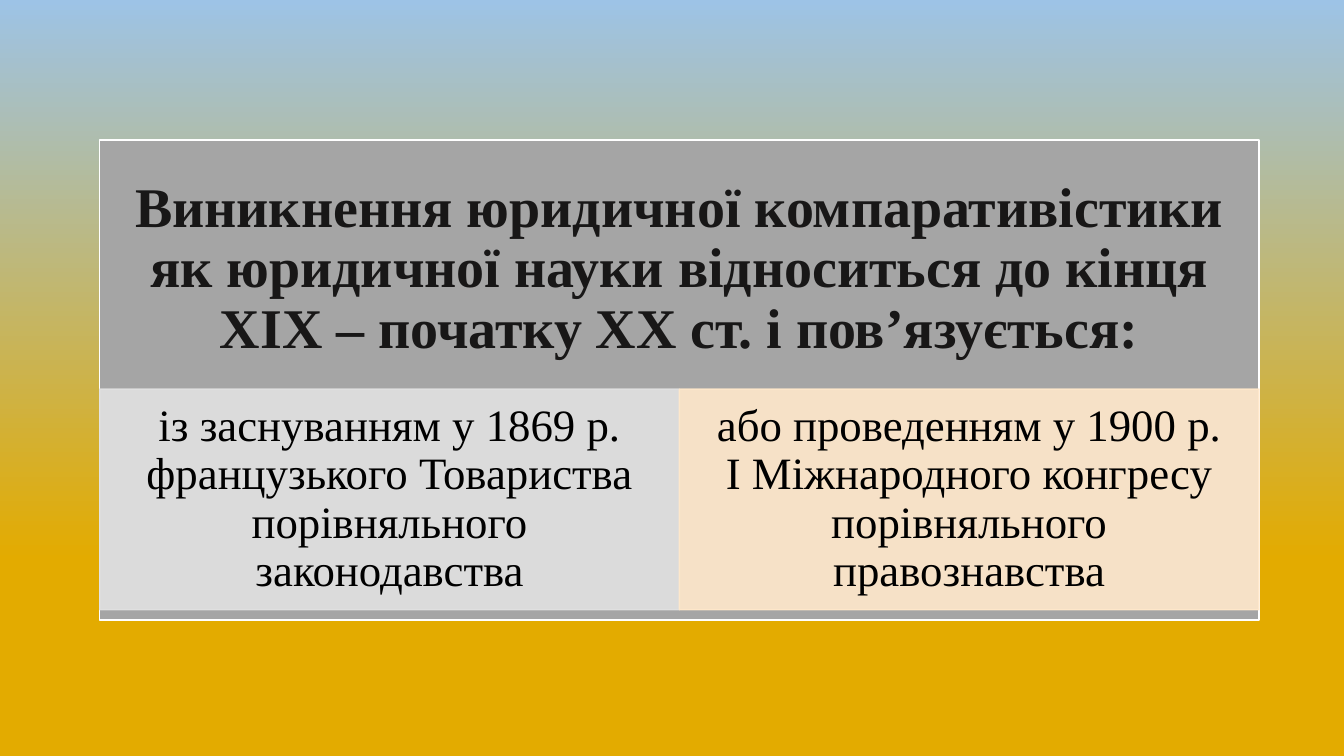
from pptx import Presentation
from pptx.dml.color import RGBColor
from pptx.enum.shapes import MSO_SHAPE as Shape
from pptx.enum.text import MSO_ANCHOR as Anchor, PP_ALIGN as Align
from pptx.oxml.ns import qn
from pptx.util import Pt
from lxml.etree import SubElement

GOLD = RGBColor(0xE3, 0xAB, 0x00)
BLUE = RGBColor(0x9D, 0xC3, 0xE6)
GREY = RGBColor(0xA5, 0xA5, 0xA5)
WHITE = RGBColor(0xFF, 0xFF, 0xFF)
PALE = RGBColor(0xE1, 0xE1, 0xE1)
PEACH = RGBColor(0xFF, 0xE8, 0xCB)
DARK = RGBColor(0x18, 0x17, 0x17)
BLACK = RGBColor(0x00, 0x00, 0x00)


class Page:
    font = "Times New Roman"

    def __init__(self, slide):
        self.slide = slide

    def sky(self, stops):
        fill = self.slide.background.fill
        fill.gradient()
        fill.gradient_angle = 90
        for stop, (place, color) in zip(fill.gradient_stops, stops):
            stop.position = place
            stop.color.rgb = color

    def panel(self, box, color, edge, alpha=None):
        shape = self.slide.shapes.add_shape(Shape.RECTANGLE, *map(Pt, box))
        shape.shadow.inherit = False
        shape.line.width = Pt(1)
        for fill, tone in ((shape.fill, color), (shape.line.fill, edge)):
            fill.solid()
            fill.fore_color.rgb = tone
        if alpha:
            for node in shape.element.spPr.iter(qn("a:srgbClr")):
                SubElement(node, qn("a:alpha")).set("val", str(alpha * 1000))
        return shape

    def label(self, box):
        return self.slide.shapes.add_textbox(*map(Pt, box))

    def words(self, shape, text, size, color, pad, bold=False):
        frame = shape.text_frame
        side, edge = map(Pt, pad)
        style = {"word_wrap": True, "vertical_anchor": Anchor.MIDDLE,
                 "margin_left": side, "margin_right": side,
                 "margin_top": edge, "margin_bottom": edge}
        for name, value in style.items():
            setattr(frame, name, value)
        para = frame.paragraphs[0]
        para.alignment = Align.CENTER
        para.line_spacing = 0.9
        run = para.add_run()
        run.text = text
        for name, value in {"name": self.font, "size": Pt(size), "bold": bold}.items():
            setattr(run.font, name, value)
        run.font.color.rgb = color


def main():
    deck = Presentation()
    deck.slide_width, deck.slide_height = Pt(960), Pt(540)
    page = Page(deck.slides.add_slide(deck.slide_layouts[6]))
    page.sky([(0.26, GOLD), (1, BLUE)])

    # Frame and heading
    left, top, wide = 71.28, 100.08, 828
    page.panel((left, top, wide, 342.72), GREY, WHITE)
    head = page.label((left, top, wide, 185.04))
    page.words(head, "Виникнення юридичної компаративістики як юридичної науки "
               "відноситься до кінця XIX – початку XX ст. і пов’язується:",
               40, DARK, (22.4, 22.4), bold=True)

    # Two cells side by side
    cells = [
        (PALE, "із заснуванням у 1869 р. французького Товариства "
               "порівняльного законодавства"),
        (PEACH, "або проведенням у 1900 р. I Міжнародного конгресу "
                "порівняльного правознавства"),
    ]
    half = wide / len(cells)
    for i, (color, text) in enumerate(cells):
        cell = page.panel((left + i * half, 277.92, half, 157.68), color, color, 90)
        page.words(cell, text, 32, BLACK, (18, 3.2))

    deck.save("out.pptx")


if __name__ == "__main__":
    main()
